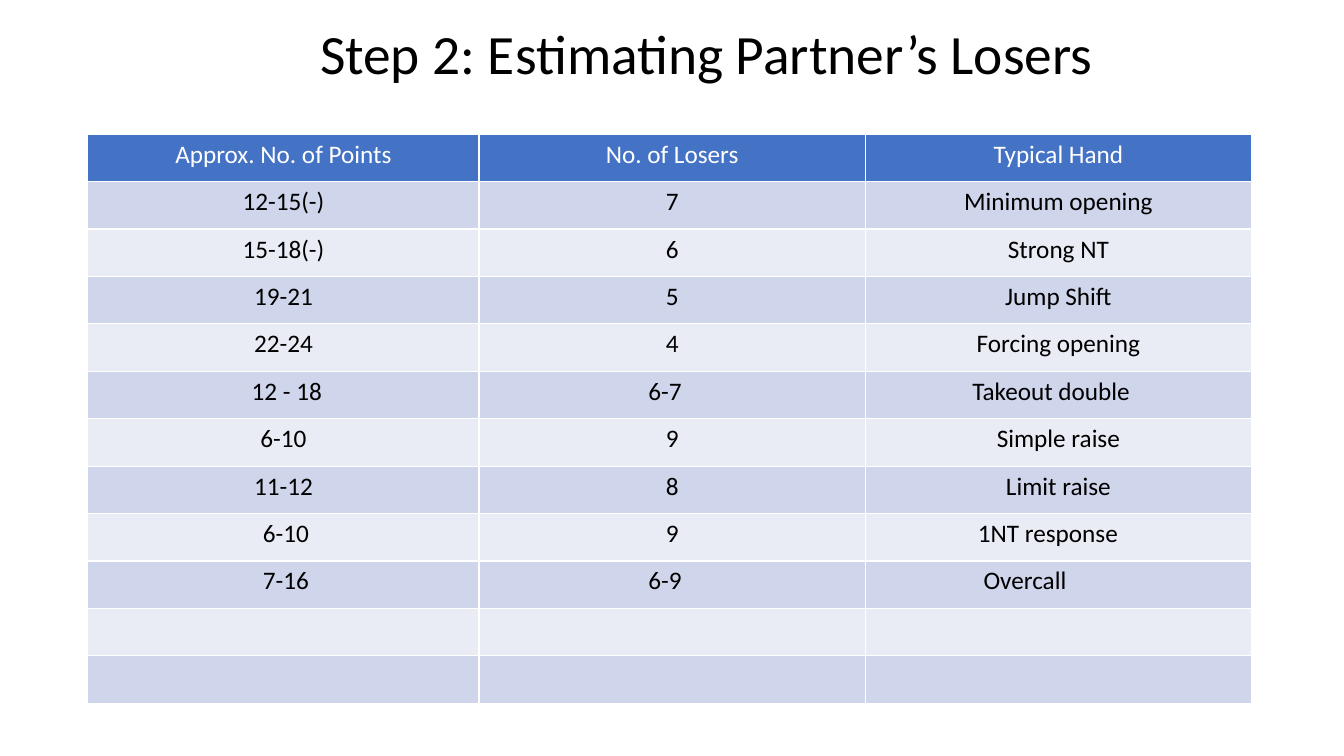
from lxml.etree import SubElement
from pptx import Presentation
from pptx.dml.color import RGBColor
from pptx.enum.text import MSO_ANCHOR as Anchor, PP_ALIGN as Align
from pptx.oxml.ns import qn
from pptx.util import Pt

# Content
TITLE = "Step 2: Estimating Partner’s Losers"
ROWS = [
    ("Approx. No. of Points", "No. of Losers", "Typical Hand"),
    ("12-15(-)", "7", "Minimum opening"),
    ("15-18(-)", "6", "Strong NT"),
    ("19-21", "5", "Jump Shift"),
    ("22-24", "4", "Forcing opening"),
    ("12 - 18", "6-7", "Takeout double"),
    ("6-10", "9", "Simple raise"),
    ("11-12", "8", "Limit raise"),
    ("6-10", "9", "1NT response"),
    ("7-16", "6-9", "Overcall"),
    ("", "", ""),
    ("", "", ""),
]
# Left margins of the cells that are not centred, by (row, column)
LEFT_MARGINS = {
    (5, 0): 117, (5, 1): 121, (5, 2): 76.5,
    (8, 0): 125, (8, 2): 80.5,
    (9, 0): 125, (9, 1): 121, (9, 2): 84.5,
}

# Style
FONT = "Calibri"
BLACK = RGBColor(0x00, 0x00, 0x00)
WHITE = RGBColor(0xFF, 0xFF, 0xFF)
HEADER_BLUE = RGBColor(0x44, 0x72, 0xC4)
BANDS = (RGBColor(0xE9, 0xEB, 0xF5), RGBColor(0xCF, 0xD5, 0xEA))
COLUMN_WIDTHS = (279.4, 275.9, 275.9)
ROW_HEIGHT = 33.9


def format_text(paragraph, size, color, alignment):
    paragraph.alignment = alignment
    paragraph.font.size = Pt(size)
    for run in paragraph.runs:
        run.font.name = FONT
        run.font.size = Pt(size)
        run.font.color.rgb = color


def add_borders(cell, color, width):
    properties = cell._tc.get_or_add_tcPr()
    for side in ("a:lnL", "a:lnR", "a:lnT", "a:lnB"):
        line = SubElement(properties, qn(side), w=str(Pt(width)))
        fill = SubElement(line, qn("a:solidFill"))
        SubElement(fill, qn("a:srgbClr"), val=str(color))


presentation = Presentation()
presentation.slide_width, presentation.slide_height = Pt(960), Pt(540)
slide = presentation.slides.add_slide(presentation.slide_layouts[6])

# Title
title = slide.shapes.add_textbox(Pt(90.7), Pt(0), Pt(828), Pt(62))
frame = title.text_frame
frame.word_wrap = True
frame.vertical_anchor = Anchor.BOTTOM
frame.margin_top = frame.margin_bottom = 0
frame.text = TITLE
frame.paragraphs[0].line_spacing = 0.9
format_text(frame.paragraphs[0], 39.6, BLACK, Align.CENTER)

# Table
table = slide.shapes.add_table(
    len(ROWS), len(COLUMN_WIDTHS), Pt(62.8), Pt(95.8),
    Pt(sum(COLUMN_WIDTHS)), Pt(ROW_HEIGHT * len(ROWS)),
).table
for column, width in zip(table.columns, COLUMN_WIDTHS):
    column.width = Pt(width)

for row_index, texts in enumerate(ROWS):
    table.rows[row_index].height = Pt(ROW_HEIGHT)
    is_header = row_index == 0
    for column_index, text in enumerate(texts):
        cell = table.cell(row_index, column_index)
        add_borders(cell, WHITE, 1)
        cell.fill.solid()
        cell.fill.fore_color.rgb = HEADER_BLUE if is_header else BANDS[row_index % 2]
        cell.text_frame.text = text
        margin = LEFT_MARGINS.get((row_index, column_index))
        if margin:
            cell.margin_left = Pt(margin)
        paragraph = cell.text_frame.paragraphs[0]
        format_text(paragraph, 18, WHITE if is_header else BLACK,
                    Align.LEFT if margin else Align.CENTER)
        for run in paragraph.runs:
            run.font.bold = False

presentation.save("out.pptx")
